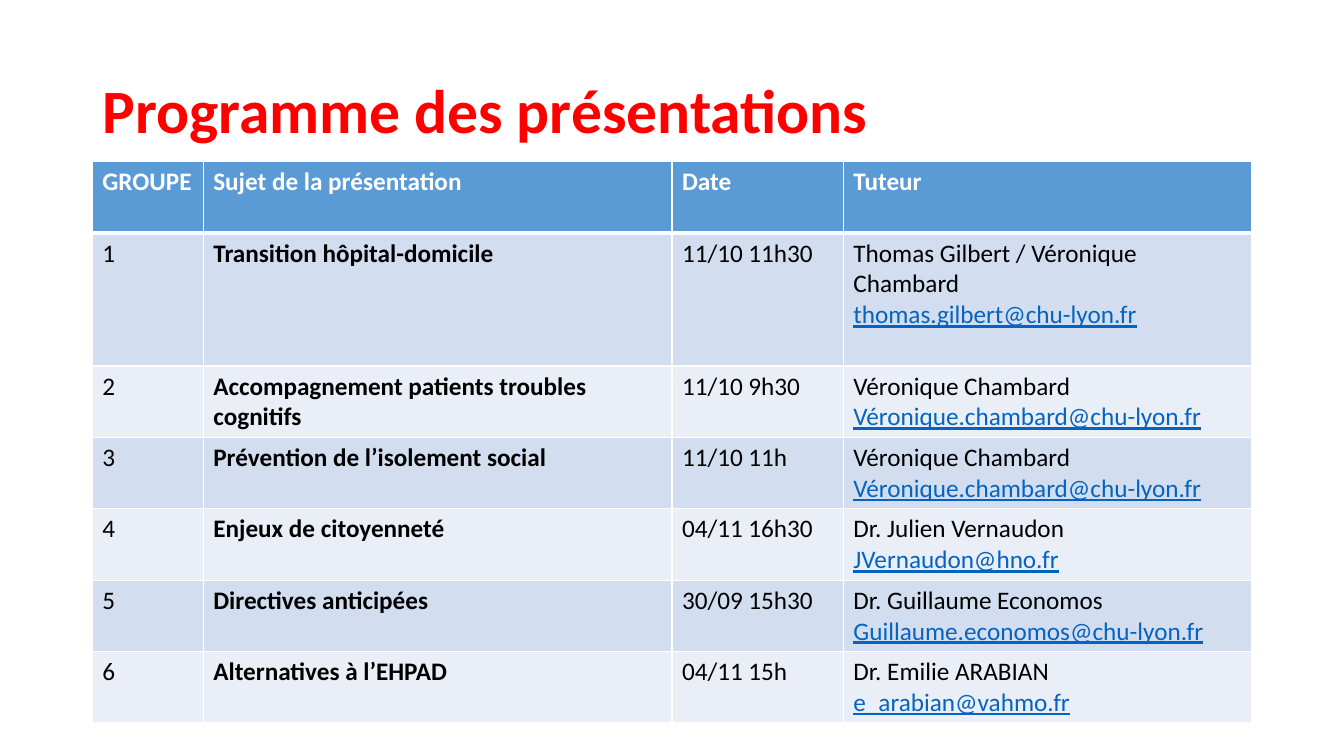
from lxml.etree import SubElement
from pptx import Presentation
from pptx.dml.color import RGBColor
from pptx.enum.text import MSO_ANCHOR as Anchor
from pptx.oxml.ns import qn
from pptx.util import Pt

RED, WHITE, BLACK, LINK = "FF0000", "FFFFFF", "000000", "0563C1"
HEADER_FILL, BAND_FILLS = "5B9BD5", ("D2DEEF", "EAEFF7")

HEADINGS = ("GROUPE", "Sujet de la présentation", "Date", "Tuteur")
SESSIONS = (
    ("Transition hôpital-domicile", "11/10 11h30",
     "Thomas Gilbert / Véronique Chambard", "thomas.gilbert@chu-lyon.fr"),
    ("Accompagnement patients troubles cognitifs", "11/10 9h30",
     "Véronique Chambard", "Véronique.chambard@chu-lyon.fr"),
    ("Prévention de l’isolement social", "11/10 11h",
     "Véronique Chambard", "Véronique.chambard@chu-lyon.fr"),
    ("Enjeux de citoyenneté", "04/11 16h30",
     "Dr. Julien Vernaudon", "JVernaudon@hno.fr"),
    ("Directives anticipées", "30/09 15h30",
     "Dr. Guillaume Economos", "Guillaume.economos@chu-lyon.fr"),
    ("Alternatives à l’EHPAD", "04/11 15h",
     "Dr. Emilie ARABIAN", "e_arabian@vahmo.fr"),
)
COLUMN_WIDTHS = (79.2, 334.8, 122.4, 291.6)
ROW_HEIGHTS = (51, 95) + (51,) * 5


def rgb(hex_string):
    return RGBColor.from_string(hex_string)


class Deck:
    font = "Calibri"
    body_size = 18

    def __init__(self, width, height):
        self.presentation = Presentation()
        self.presentation.slide_width = Pt(width)
        self.presentation.slide_height = Pt(height)
        self.slide = self.presentation.slides.add_slide(
            self.presentation.slide_layouts[6])

    def run(self, paragraph, text, color=BLACK, size=body_size,
            bold=False, underline=False):
        run = paragraph.add_run()
        run.text = text
        font = run.font
        font.name, font.size = self.font, Pt(size)
        font.bold, font.underline = bold, underline
        font.color.rgb = rgb(color)

    def title(self, text, left, top, width, height):
        frame = self.slide.shapes.add_textbox(
            Pt(left), Pt(top), Pt(width), Pt(height)).text_frame
        frame.word_wrap = True
        frame.vertical_anchor = Anchor.MIDDLE
        heading = frame.paragraphs[0]
        heading.line_spacing = 0.9
        self.run(heading, text, RED, 44, bold=True)

    def table(self, left, top, widths, heights):
        table = self.slide.shapes.add_table(
            len(heights), len(widths), Pt(left), Pt(top),
            Pt(sum(widths)), Pt(sum(heights))).table
        for column, width in zip(table.columns, widths):
            column.width = Pt(width)
        for row, height in zip(table.rows, heights):
            row.height = Pt(height)
        return table

    def borders(self, cell, **widths):
        """Draw white borders; widths are keyed by side: L, R, T, B."""
        properties = cell._tc.get_or_add_tcPr()
        for side in "LRTB":
            line = SubElement(properties, qn(f"a:ln{side}"),
                              w=str(Pt(widths.get(side, 1))))
            fill = SubElement(line, qn("a:solidFill"))
            SubElement(fill, qn("a:srgbClr"), val=WHITE)

    def cell(self, cell, fill, *lines, **border_widths):
        """Fill a cell with one paragraph per (text, style) line."""
        self.borders(cell, **border_widths)
        cell.fill.solid()
        cell.fill.fore_color.rgb = rgb(fill)
        frame = cell.text_frame
        for index, (text, style) in enumerate(lines):
            paragraph = frame.add_paragraph() if index else frame.paragraphs[0]
            self.run(paragraph, text, **style)


def main():
    deck = Deck(960, 540)
    deck.title("Programme des présentations", 66, 29, 828, 104)
    programme = deck.table(66, 115.5, COLUMN_WIDTHS, ROW_HEIGHTS)

    for column, heading in enumerate(HEADINGS):
        deck.cell(programme.cell(0, column), HEADER_FILL,
                  (heading, {"color": WHITE, "bold": True}), B=3)

    for group, (subject, date, tutor, email) in enumerate(SESSIONS, 1):
        contents = (
            [(str(group), {})],
            [(subject, {"bold": True})],
            [(date, {})],
            [(tutor, {}), (email, {"color": LINK, "underline": True})],
        )
        for column, lines in enumerate(contents):
            deck.cell(programme.cell(group, column),
                      BAND_FILLS[(group - 1) % 2], *lines,
                      T=3 if group == 1 else 1)

    deck.presentation.save("out.pptx")


if __name__ == "__main__":
    main()
